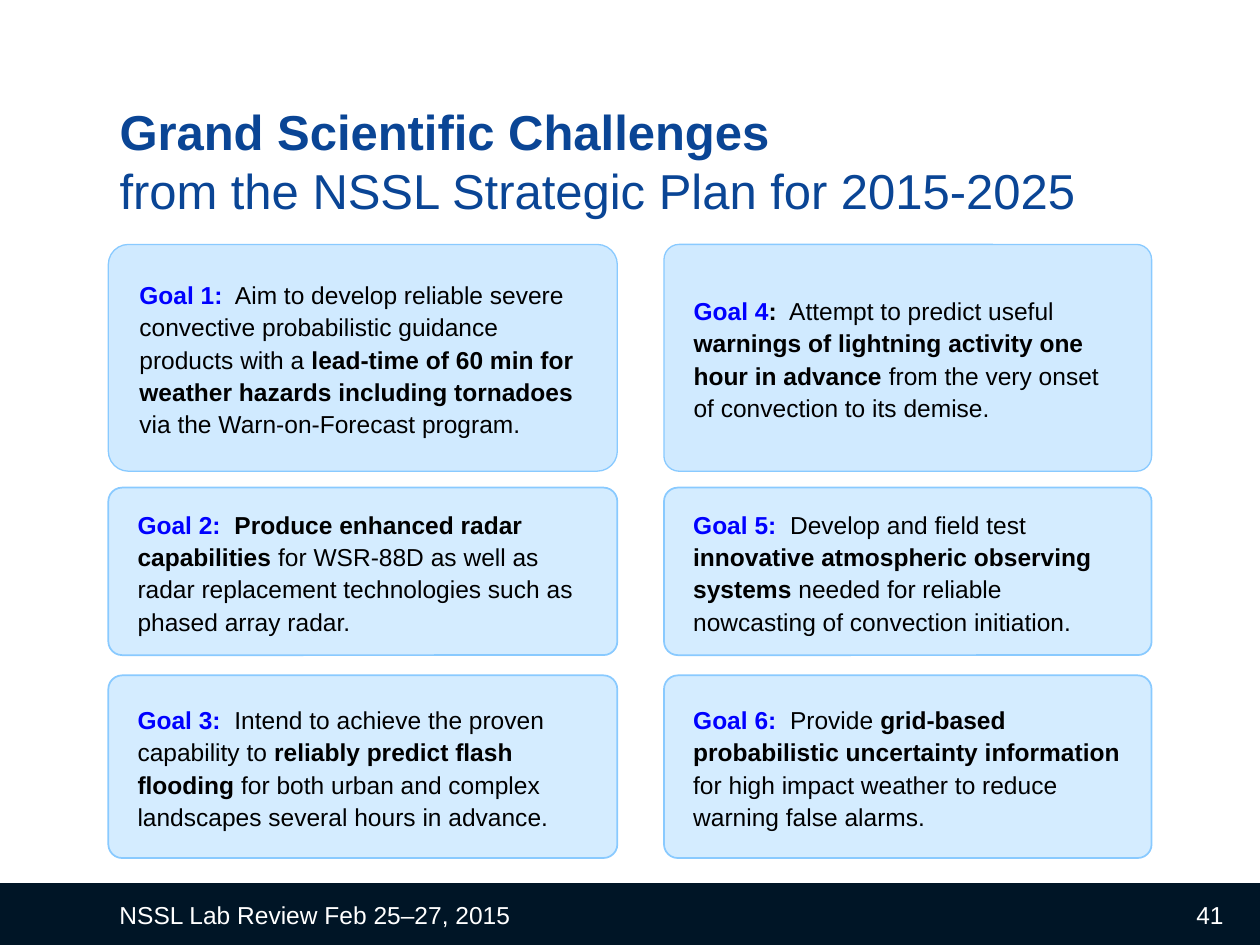
import pptx
import pptx.util
import pptx.dml.color
import pptx.enum.shapes
import pptx.enum.text
import pptx.oxml.ns
from lxml import etree

Inches, Pt = pptx.util.Inches, pptx.util.Pt
ALIGN = pptx.enum.text.PP_ALIGN
ANCHOR = pptx.enum.text.MSO_ANCHOR
SHAPE = pptx.enum.shapes.MSO_SHAPE

COLORS = {"bar": "001526", "title": "0A4595", "white": "FFFFFF", "card": "D0EAFF",
          "edge": "89CAFF", "label": "0000FF", "body": "000000"}

TITLE = ["Grand Scientific Challenges", "from the NSSL Strategic Plan for 2015-2025"]
FOOTER = "NSSL Lab Review Feb 25–27, 2015"
PAGE = "41"

# Label, then text with bold parts between asterisks; one list per column
GOALS = [
    [("Goal 1:", "  Aim to develop reliable severe convective probabilistic guidance products "
      "with a *lead-time of 60 min for weather hazards including tornadoes* "
      "via the Warn-on-Forecast program."),
     ("Goal 2:", "  *Produce enhanced radar capabilities* for WSR-88D as well as radar "
      "replacement technologies such as phased array radar."),
     ("Goal 3:", "  Intend to achieve the proven capability to *reliably predict flash "
      "flooding* for both urban and complex landscapes several hours in advance.")],
    [("Goal 4", "*:*  Attempt to predict useful *warnings of lightning activity one hour in "
      "advance* from the very onset of convection to its demise."),
     ("Goal 5:", "  Develop and field test *innovative atmospheric observing systems* needed "
      "for reliable nowcasting of convection initiation."),
     ("Goal 6:", "  Provide *grid-based probabilistic uncertainty information* for high "
      "impact weather to reduce warning false alarms.")],
]
COLS = [(0.86, 4.04), (5.27, 3.87)]                # left, width
ROWS = [(1.94, 1.8), (3.87, 1.33), (5.36, 1.45)]   # top, height
RADII = [[0.16, 0.11, 0.11], [0.12, 0.11, 0.11]]


def rgb(name):
    return pptx.dml.color.RGBColor.from_string(COLORS[name])


def style(font, size, color, bold=False):
    font.name, font.size, font.bold = "Arial", Pt(size), bold
    font.color.rgb = rgb(color)


def fade(fill):
    """Make a solid fill 90 % opaque."""
    tag = pptx.oxml.ns.qn("a:alpha")
    etree.SubElement(fill._xPr.find(".//" + pptx.oxml.ns.qn("a:srgbClr")), tag, val="90000")


def block(slide, kind, box, color):
    shape = slide.shapes.add_shape(kind, *map(Inches, box))
    shape.shadow.inherit = False
    shape.fill.solid()
    shape.fill.fore_color.rgb = rgb(color)
    shape.line.fill.background()
    return shape


def label(slide, box, text, size, color, anchor=ANCHOR.MIDDLE, align=ALIGN.LEFT):
    frame = slide.shapes.add_textbox(*map(Inches, box)).text_frame
    frame.word_wrap = True
    frame.vertical_anchor = anchor
    par = frame.paragraphs[0]
    par.text = text
    par.alignment = align
    for run in par.runs:
        style(run.font, size, color)
    return par


def card(slide, box, radius, goal, row):
    shape = block(slide, SHAPE.ROUNDED_RECTANGLE, box, "card")
    shape.adjustments[0] = radius / box[3]
    shape.line.color.rgb = rgb("edge")
    shape.line.width = Pt(1 if row else 0.75)
    if row:
        fade(shape.fill)
    frame = shape.text_frame
    frame.word_wrap = True
    frame.vertical_anchor = ANCHOR.MIDDLE
    frame.margin_left = frame.margin_right = Inches(0.2)
    frame.margin_top = frame.margin_bottom = 0
    par = frame.paragraphs[0]
    par.alignment = ALIGN.LEFT
    par.line_spacing = 1.1
    name, text = goal
    parts = [(name, "label", True)]
    parts += [(part, "body", i % 2 == 1) for i, part in enumerate(text.split("*"))]
    for part, color, bold in parts:
        if part:
            run = par.add_run()
            run.text = part
            style(run.font, 14, color, bold)


def main():
    deck = pptx.Presentation()
    deck.slide_width, deck.slide_height = Inches(10), Inches(7.5)
    slide = deck.slides.add_slide(deck.slide_layouts[6])
    block(slide, SHAPE.RECTANGLE, (0, 7.01, 10, 0.49), "bar")
    title = label(slide, (0.85, 0.84, 8.29, 0.95), "\v".join(TITLE), 28, "title",
                  ANCHOR.BOTTOM)
    title.runs[0].font.bold = True
    label(slide, (0.85, 7.06, 4.57, 0.4), FOOTER, 14, "white")
    label(slide, (7.48, 7.06, 2.33, 0.4), PAGE, 14, "white", align=ALIGN.RIGHT)
    for (left, width), goals, radii in zip(COLS, GOALS, RADII):
        for row, (goal, radius) in enumerate(zip(goals, radii)):
            top, height = ROWS[row]
            card(slide, (left, top, width, height), radius, goal, row)
    deck.save("out.pptx")


if __name__ == "__main__":
    main()
